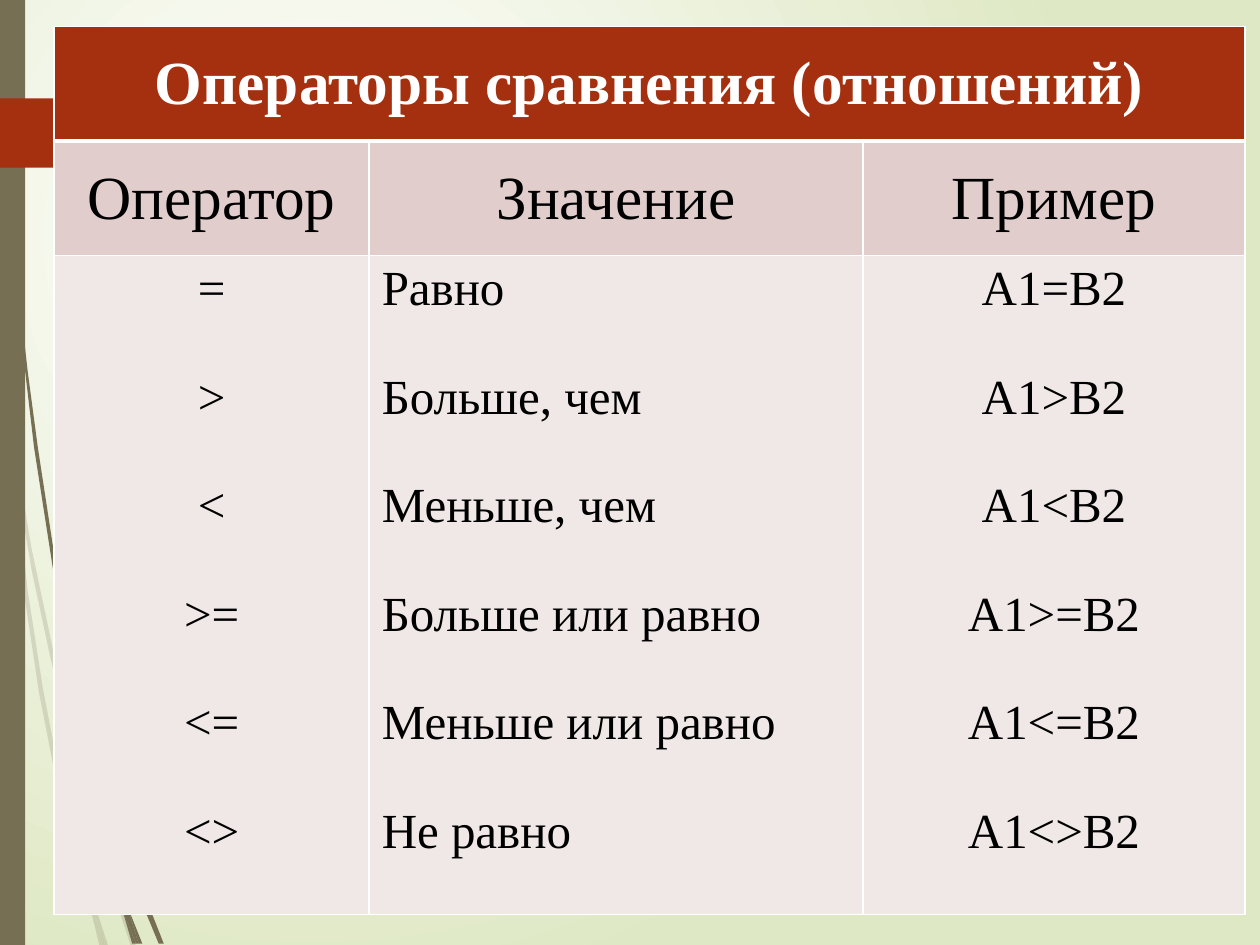
from lxml import etree
from pptx import Presentation
from pptx.dml.color import RGBColor
from pptx.enum.shapes import MSO_SHAPE
from pptx.enum.text import MSO_ANCHOR, PP_ALIGN
from pptx.oxml.ns import qn
from pptx.util import Inches, Pt

LEFT, MID = PP_ALIGN.LEFT, PP_ALIGN.CENTER
TOP, CENTRE = MSO_ANCHOR.TOP, MSO_ANCHOR.MIDDLE
RECT, TAB = MSO_SHAPE.RECTANGLE, MSO_SHAPE.PENTAGON

WHITE = RGBColor(0xFF, 0xFF, 0xFF)
BLACK = RGBColor(0, 0, 0)
LIME = RGBColor(0xDF, 0xE8, 0xC4)
OLIVE = RGBColor(0x76, 0x6F, 0x54)
RUST = RGBColor(0xA5, 0x30, 0x10)
ROSE = RGBColor(0xE1, 0xCD, 0xCC)
PALE = RGBColor(0xF0, 0xE8, 0xE7)
FONT = "Times New Roman"

# Content
TITLE = "Операторы сравнения (отношений)"
HEADS = ["Оператор", "Значение", "Пример"]
ITEMS = [
    ("=", "Равно", "А1=В2"),
    (">", "Больше, чем", "А1>В2"),
    ("<", "Меньше, чем", "А1<В2"),
    (">=", "Больше или равно", "А1>=В2"),
    ("<=", "Меньше или равно", "А1<=В2"),
    ("<>", "Не равно", "А1<>В2"),
]
ALIGNS = [MID, LEFT, MID]
COLS = [2.5, 3.92, 3.03]
ROWS = [0.91, 0.91, 5.23]

# Outlines of the grass blades, faint ones behind and solid ones in front
FAINT = [
    [(0.08, 3.5), (0.06, 3.22), (0, 2.82), (0, 2.99), (0.07, 3.44)],
    [(0.4, 5.22), (0.59, 5.99), (0.59, 5.86), (0.43, 5.2), (0.25, 4.35),
     (0.1, 3.45), (0.12, 3.76), (0.25, 4.52)],
    [(0.64, 6.07), (0.61, 5.96), (0.61, 6.1), (0.85, 6.94), (1.04, 7.51),
     (1.08, 7.51), (0.88, 6.92)],
    [(0.83, 7.51), (0.86, 7.51), (0.73, 7.11)],
    [(0.65, 6.83), (0.48, 6.19), (0.34, 5.46), (0.22, 4.69), (0.12, 3.76),
     (0.08, 3.5), (0.13, 4.15), (0.19, 4.7), (0.31, 5.5), (0.45, 6.21),
     (0.64, 6.93), (0.7, 7.14), (0.69, 7.07)],
    [(0.59, 5.99), (0.6, 6.46), (0.64, 6.83), (0.67, 6.92), (0.73, 7.11),
     (0.72, 7.06), (0.63, 6.46), (0.61, 6.1), (0.61, 6.08)],
    [(0.61, 5.84), (0.76, 4.62), (1.11, 3.49), (1.59, 2.45), (1.87, 1.98),
     (2.01, 1.75), (2.17, 1.53), (2.01, 1.75), (1.86, 1.97), (1.58, 2.44),
     (1.1, 3.48), (0.75, 4.61), (0.59, 5.84), (0.59, 5.86), (0.61, 5.96)],
    [(0.7, 7.14), (0.79, 7.51), (0.82, 7.51)],
    [(0.61, 6.08), (0.61, 6.1), (0.61, 5.96), (0.59, 5.86), (0.59, 5.99)],
    [(0.67, 6.92), (0.65, 6.83), (0.69, 7.07), (0.7, 7.14), (0.82, 7.51),
     (0.83, 7.51), (0.73, 7.11)],
]
SOLID = [
    [(0.05, 1.1), (0.14, 2.33), (0.2, 2.95), (0.27, 3.55), (0.46, 4.77),
     (0.47, 4.81), (0.45, 4.57), (0.45, 4.53), (0.3, 3.55), (0.22, 2.95),
     (0.15, 2.32), (0.06, 1.09), (0.04, 0.48), (0.03, 0), (0.02, 0),
     (0.03, 0.48)],
    [(0.73, 5.92), (0.88, 6.45), (0.88, 6.33), (0.88, 6.31), (0.77, 5.9),
     (0.5, 4.72), (0.53, 5.05)],
    [(0.94, 6.49), (0.91, 6.41), (0.91, 6.56), (1.09, 7.08), (1.26, 7.49),
     (1.3, 7.49), (1.13, 7.06)],
    [(0.91, 6.91), (0.81, 6.57), (0.6, 5.56), (0.53, 5.05), (0.47, 4.77),
     (0.56, 5.57), (0.77, 6.59), (0.92, 7.08), (0.97, 7.22), (0.96, 7.17)],
    [(0.5, 4.72), (0.48, 4.53), (0.44, 3.49), (0.48, 2.45), (0.52, 1.93),
     (0.58, 1.41), (0.51, 1.93), (0.47, 2.45), (0.43, 3.49), (0.45, 4.49),
     (0.49, 4.72)],
    [(1.1, 7.49), (1.13, 7.49), (1.01, 7.19)],
    [(0.47, 4.77), (0.53, 5.05), (0.5, 4.72), (0.49, 4.72), (0.45, 4.49),
     (0.45, 4.53)],
    [(0.91, 6.33), (1.03, 5.52), (1.31, 4.76), (1.69, 4.06), (1.91, 3.74),
     (2.03, 3.59), (2.16, 3.44), (2.03, 3.58), (1.91, 3.73), (1.68, 4.05),
     (1.29, 4.74), (1.01, 5.51), (0.88, 6.31), (0.91, 6.41)],
    [(0.97, 7.22), (1.05, 7.49), (1.08, 7.49)],
    [(0.88, 6.45), (0.91, 6.92), (0.96, 7.06), (1.01, 7.19), (1, 7.16),
     (0.91, 6.56), (0.9, 6.51)],
    [(0.88, 6.45), (0.9, 6.51), (0.91, 6.56), (0.91, 6.41), (0.88, 6.31)],
    [(0.96, 7.06), (0.91, 6.91), (0.96, 7.17), (0.97, 7.22), (1.08, 7.49),
     (1.1, 7.49), (1.01, 7.19)],
]


def paint(shape, color, alpha=100):
    shape.shadow.inherit = False
    shape.fill.solid()
    shape.fill.fore_color.rgb = color
    shape.line.fill.background()
    if alpha < 100:
        tone = shape.fill._xPr.find(".//" + qn("a:srgbClr"))
        etree.SubElement(tone, qn("a:alpha"), val=str(alpha * 1000))


def edge(cell, side, width):
    line = etree.SubElement(cell._tc.get_or_add_tcPr(), qn("a:ln" + side),
                            w=str(Pt(width)))
    fill = etree.SubElement(line, qn("a:solidFill"))
    etree.SubElement(fill, qn("a:srgbClr"), val=str(WHITE))


def write(cell, lines, size=35, color=BLACK, bold=False, align=MID,
          anchor=CENTRE, fill=PALE, gap=0, base=1):
    for side, width in zip("LRTB", (1, 1, 1, base)):
        edge(cell, side, width)
    cell.fill.solid()
    cell.fill.fore_color.rgb = fill
    cell.vertical_anchor = anchor
    frame = cell.text_frame
    for i, text in enumerate(lines):
        para = frame.add_paragraph() if i else frame.paragraphs[0]
        para.alignment = align
        para.space_before = Pt(gap if i else 0)
        run = para.add_run()
        run.text = text
        run.font.name, run.font.size = FONT, Pt(size)
        run.font.bold = bold
        run.font.color.rgb = color


prs = Presentation()
prs.slide_width, prs.slide_height = Inches(10), Inches(7.5)
slide = prs.slides.add_slide(prs.slide_layouts[6])
shapes = slide.shapes

# Radial background
back = slide.background.fill
back.gradient()
for stop, color, pos in zip(back.gradient_stops, (WHITE, LIME), (0, 1)):
    stop.color.rgb, stop.position = color, pos
grad = slide.background._cSld.find(".//" + qn("a:gradFill"))
grad.remove(grad.find(qn("a:lin")))
way = etree.SubElement(grad, qn("a:path"), path="circle")
etree.SubElement(way, qn("a:fillToRect"), l="50000", t="50000",
                 r="100000", b="100000")

# Grass, side bar and tab
for blades, alpha in ((FAINT, 20), (SOLID, 100)):
    for blade in blades:
        start, *rest = [(Inches(x), Inches(y)) for x, y in blade]
        pen = shapes.build_freeform(*start)
        pen.add_line_segments(rest)
        paint(pen.convert_to_shape(), OLIVE, alpha)
for kind, box, color in ((RECT, (0, 0, 0.2, 7.5), OLIVE),
                         (TAB, (0, 0.78, 1.49, 0.55), RUST)):
    paint(shapes.add_shape(kind, *map(Inches, box)), color)

# Table
table = shapes.add_table(len(ROWS), len(COLS), Inches(0.43), Inches(0.21),
                         Inches(sum(COLS)), Inches(sum(ROWS))).table
table.horz_banding = False
for col, width in zip(table.columns, COLS):
    col.width = Inches(width)
for row, height in zip(table.rows, ROWS):
    row.height = Inches(height)
table.cell(0, 0).merge(table.cell(0, len(COLS) - 1))
write(table.cell(0, 0), [TITLE], color=WHITE, bold=True, fill=RUST, base=3)
for c, (head, items, align) in enumerate(zip(HEADS, zip(*ITEMS), ALIGNS)):
    write(table.cell(1, c), [head], fill=ROSE)
    write(table.cell(2, c), items, size=28, align=align, anchor=TOP, gap=31)

prs.save("out.pptx")
